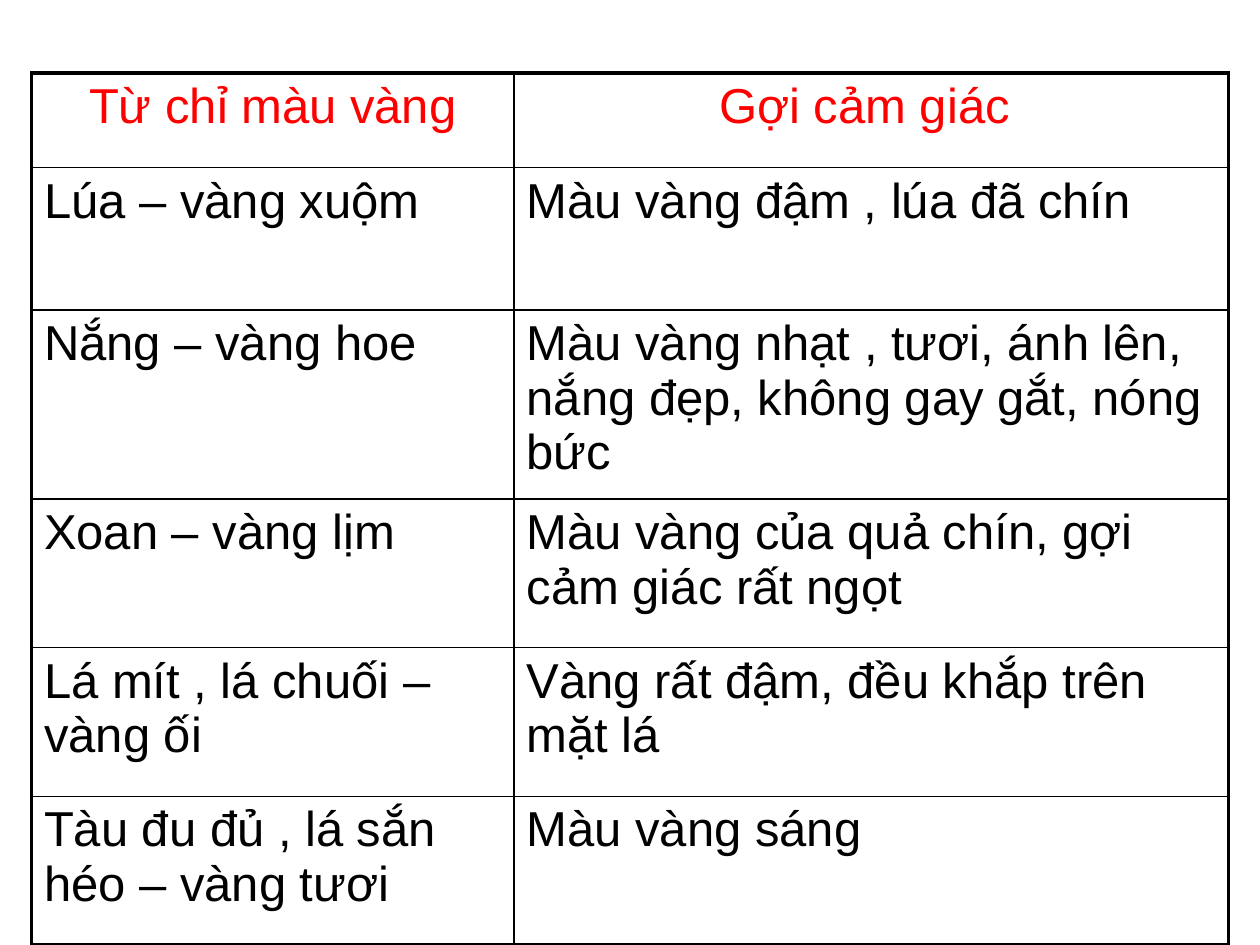
"""Build a slide with a table of Vietnamese words for yellow and the feelings they evoke."""
from dataclasses import dataclass

from lxml.etree import SubElement
from pptx import Presentation
from pptx.dml.color import RGBColor
from pptx.enum.text import PP_ALIGN as Align
from pptx.oxml.ns import qn
from pptx.util import Inches, Pt

FONT, SIZE = "Arial", 28
BLACK, RED = "000000", "FF0000"
THIN, THICK = 1, 2.25
COLUMN_WIDTHS = (3.83, 5.67)


@dataclass(frozen=True)
class WordRow:
    word: str
    feeling: str
    height: float
    color: str = BLACK
    align: Align = Align.LEFT


WORD_ROWS = (
    WordRow("Từ chỉ màu vàng", "Gợi cảm giác ", 0.75, RED, Align.CENTER),
    WordRow("Lúa – vàng xuộm", "Màu vàng đậm , lúa đã chín", 1.13),
    WordRow("Nắng – vàng hoe",
            "Màu vàng nhạt , tươi, ánh lên, nắng đẹp, không gay gắt, nóng bức", 1.5),
    WordRow("Xoan – vàng lịm", "Màu vàng của quả chín, gợi cảm giác rất ngọt", 1.18),
    WordRow("Lá mít , lá chuối – vàng ối", "Vàng rất đậm, đều khắp trên mặt lá", 1.18),
    WordRow("Tàu đu đủ , lá sắn héo – vàng tươi", "Màu vàng sáng", 1.18),
)


def rgb(color: str) -> RGBColor:
    return RGBColor.from_string(color)


def draw_border(cell, outer_edges: dict[str, bool]) -> None:
    properties = cell._tc.get_or_add_tcPr()
    for position, (edge, is_outer) in enumerate(outer_edges.items()):
        width = Pt(THICK if is_outer else THIN)
        line = SubElement(properties, qn(f"a:{edge}"), w=str(int(width)))
        fill = SubElement(line, qn("a:solidFill"))
        SubElement(fill, qn("a:srgbClr"), val=BLACK)
        properties.insert(position, line)


def write_cell(cell, wording: str, row: WordRow) -> None:
    cell.fill.background()
    cell.text_frame.text = wording
    paragraph = cell.text_frame.paragraphs[0]
    paragraph.alignment = row.align
    font = paragraph.runs[0].font
    font.name, font.size = FONT, Pt(SIZE)
    font.color.rgb = rgb(row.color)


def draw_word_table(slide) -> None:
    last_row, last_column = len(WORD_ROWS) - 1, len(COLUMN_WIDTHS) - 1
    table = slide.shapes.add_table(
        len(WORD_ROWS), len(COLUMN_WIDTHS), Inches(0.25), Inches(0.58),
        Inches(sum(COLUMN_WIDTHS)), Inches(sum(row.height for row in WORD_ROWS)),
    ).table
    table.first_row = table.horz_banding = False
    for column, width in zip(table.columns, COLUMN_WIDTHS):
        column.width = Inches(width)
    for r, row in enumerate(WORD_ROWS):
        table.rows[r].height = Inches(row.height)
        for c, wording in enumerate((row.word, row.feeling)):
            cell = table.cell(r, c)
            write_cell(cell, wording, row)
            draw_border(cell, {"lnL": c == 0, "lnR": c == last_column,
                               "lnT": r == 0, "lnB": r == last_row})


def main() -> None:
    deck = Presentation()
    deck.slide_width, deck.slide_height = Inches(10), Inches(7.5)
    draw_word_table(deck.slides.add_slide(deck.slide_layouts[6]))
    deck.save("out.pptx")


if __name__ == "__main__":
    main()
